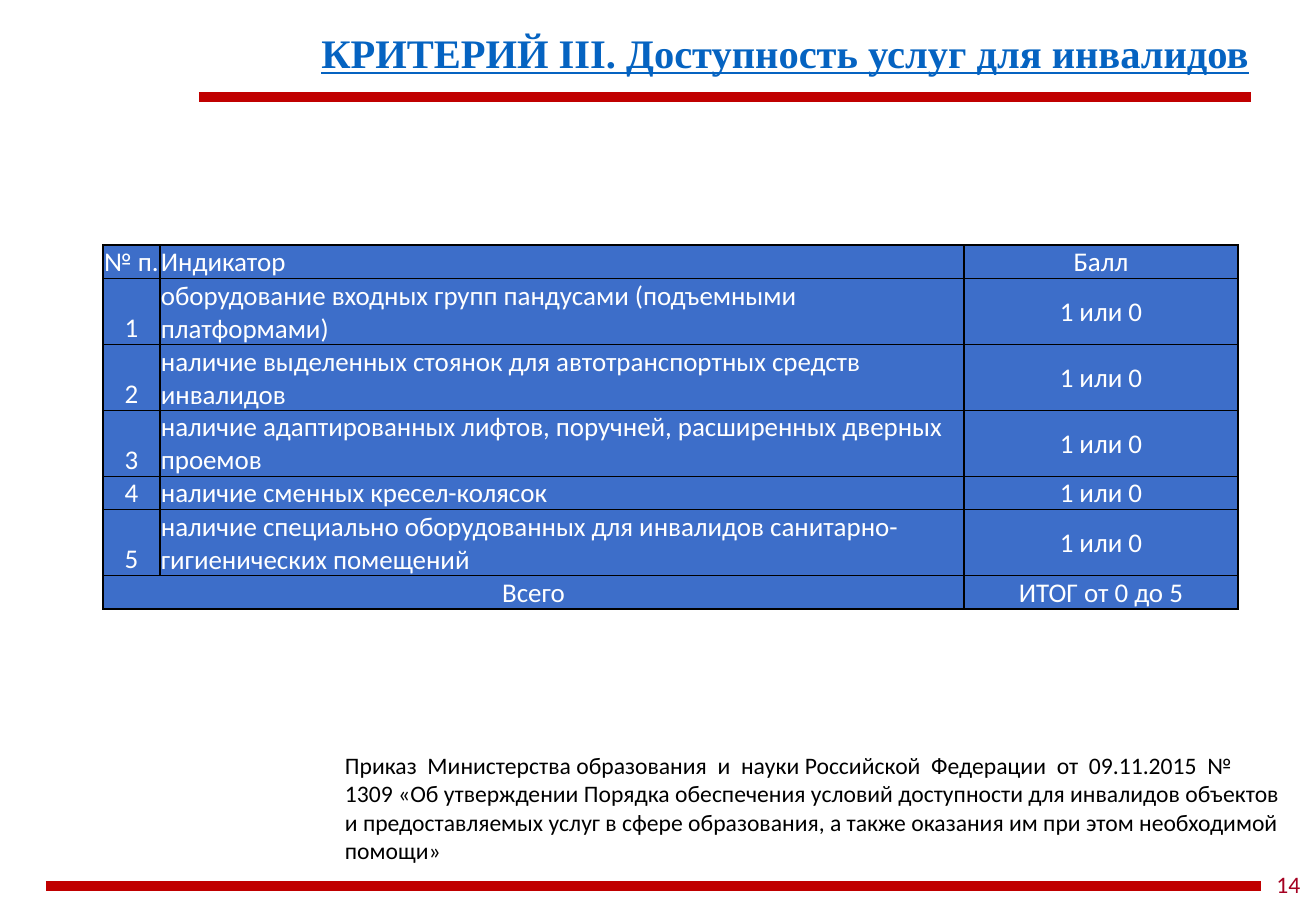
import pptx
import pptx.util
import pptx.dml.color
import pptx.enum.shapes
import pptx.enum.text
import pptx.oxml
import pptx.oxml.ns

EMU_PER_PX = 7526
COLORS = {
    "title": "0563C1",
    "rule": "C00000",
    "number": "A50021",
    "cell": "3D6EC9",
    "cell_text": "FFFFFF",
    "text": "000000",
    "border": "000000",
}
ALIGN = pptx.enum.text.PP_ALIGN
ANCHOR = pptx.enum.text.MSO_ANCHOR

COLUMN_WIDTHS = [57, 804, 274]
LINE_HEIGHT = 33
SCORE = "1 или 0"
INDICATORS = [
    ("оборудование входных групп пандусами (подъемными платформами)", 2),
    ("наличие выделенных стоянок для автотранспортных средств инвалидов", 2),
    ("наличие адаптированных лифтов, поручней, расширенных дверных проемов", 2),
    ("наличие сменных кресел-колясок", 1),
    ("наличие специально оборудованных для инвалидов санитарно-гигиенических помещений", 2),
]
ORDER = (
    "Приказ  Министерства образования  и  науки Российской  Федерации  от  09.11.2015  №  1309 "
    "«Об утверждении Порядка обеспечения условий доступности для инвалидов объектов "
    "и предоставляемых услуг в сфере образования, а также оказания им при этом необходимой помощи»"
)


def px(value):
    return pptx.util.Emu(value * EMU_PER_PX)


def rgb(name):
    return pptx.dml.color.RGBColor.from_string(COLORS[name])


def write(frame, text, *, size, color, font="Calibri", align=ALIGN.LEFT,
          bold=False, underline=False):
    frame.word_wrap = True
    paragraph = frame.paragraphs[0]
    paragraph.alignment = align
    run = paragraph.add_run()
    run.text = text
    run.font.name = font
    run.font.size = pptx.util.Pt(size)
    run.font.bold = bold
    run.font.underline = underline
    run.font.color.rgb = rgb(color)


def add_title(slide, text):
    title = slide.shapes.title
    title.left, title.top, title.width, title.height = map(px, (276, 22, 985, 61))
    title.text_frame.auto_size = pptx.enum.text.MSO_AUTO_SIZE.NONE
    title.text_frame.vertical_anchor = ANCHOR.TOP
    write(title.text_frame, text, size=24, color="title", font="Times New Roman",
          align=ALIGN.RIGHT, bold=True, underline=True)


def add_rule(slide, left, right, y):
    rule = slide.shapes.add_connector(
        pptx.enum.shapes.MSO_CONNECTOR.STRAIGHT, px(left), px(y), px(right), px(y))
    rule.line.color.rgb = rgb("rule")
    rule.line.width = pptx.util.Pt(6)
    rule._element.spPr.append(pptx.oxml.parse_xml(
        f'<a:effectLst {pptx.oxml.ns.nsdecls("a")}/>'))


def add_text(slide, text, box, anchor=ANCHOR.TOP, **text_format):
    frame = slide.shapes.add_textbox(*map(px, box)).text_frame
    frame.vertical_anchor = anchor
    write(frame, text, **text_format)


def add_borders(cell):
    properties = cell._tc.get_or_add_tcPr()
    for position, side in enumerate(("lnL", "lnR", "lnT", "lnB")):
        properties.insert(position, pptx.oxml.parse_xml(
            f'<a:{side} {pptx.oxml.ns.nsdecls("a")} w="12700"><a:solidFill>'
            f'<a:srgbClr val="{COLORS["border"]}"/></a:solidFill></a:{side}>'))


def fill_cell(cell, text, align, anchor):
    cell.margin_left = cell.margin_right = cell.margin_top = px(1)
    cell.margin_bottom = 0
    cell.vertical_anchor = anchor
    cell.fill.solid()
    cell.fill.fore_color.rgb = rgb("cell")
    add_borders(cell)
    if text:
        write(cell.text_frame, text, size=16, color="cell_text", align=align)


def add_criteria_table(slide):
    rows = [("№ п.", "Индикатор", "Балл", 1)]
    rows += [(str(number), indicator, SCORE, lines)
             for number, (indicator, lines) in enumerate(INDICATORS, 1)]
    rows.append(("Всего", "", "ИТОГ от 0 до 5", 1))
    height = LINE_HEIGHT * sum(row[-1] for row in rows)
    criteria = slide.shapes.add_table(
        len(rows), len(COLUMN_WIDTHS), px(103), px(245),
        px(sum(COLUMN_WIDTHS)), px(height)).table
    for column, width in zip(criteria.columns, COLUMN_WIDTHS):
        column.width = px(width)
    for row_index, (*texts, lines) in enumerate(rows):
        criteria.rows[row_index].height = px(LINE_HEIGHT * lines)
        is_indicator = 0 < row_index < len(rows) - 1
        for column_index, text in enumerate(texts):
            fill_cell(
                criteria.cell(row_index, column_index), text,
                ALIGN.LEFT if column_index == 1 else ALIGN.CENTER,
                ANCHOR.BOTTOM if is_indicator and column_index < 2 else ANCHOR.MIDDLE)
    total_row = len(rows) - 1
    criteria.cell(total_row, 0).merge(criteria.cell(total_row, 1))


def main():
    presentation = pptx.Presentation()
    presentation.slide_width = px(1316)
    presentation.slide_height = px(911)
    slide = presentation.slides.add_slide(presentation.slide_layouts[5])
    add_rule(slide, 199, 1251, 97)
    add_title(slide, "КРИТЕРИЙ III. Доступность услуг для инвалидов")
    add_rule(slide, 46, 1261, 886)
    add_text(slide, "14", (1261, 858, 55, 53), ANCHOR.MIDDLE,
             size=14, color="number", align=ALIGN.CENTER)
    add_criteria_table(slide)
    add_text(slide, ORDER, (333, 745, 970, 126), size=14, color="text")
    presentation.save("out.pptx")


if __name__ == "__main__":
    main()
